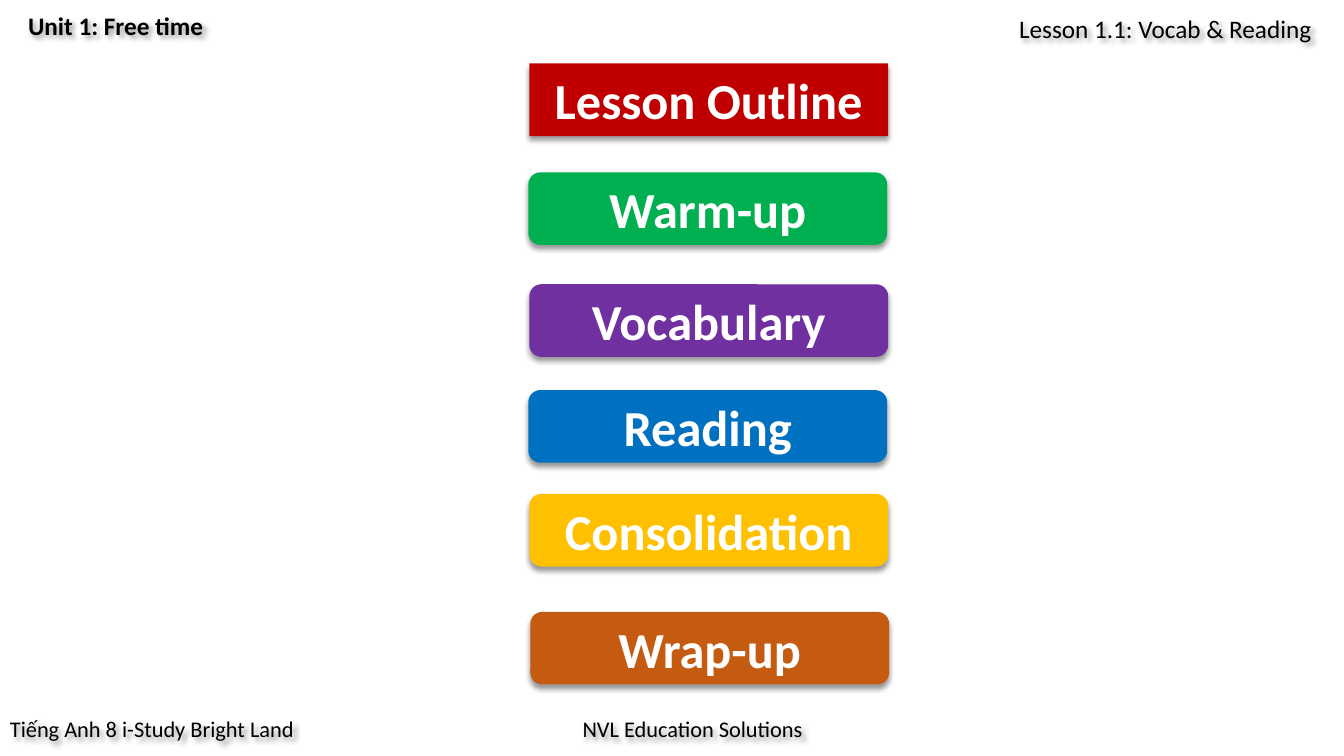
"""Build a lesson outline slide with six coloured cards and running captions."""
from dataclasses import dataclass

from lxml.etree import SubElement
from pptx import Presentation
from pptx.dml.color import RGBColor
from pptx.enum.shapes import MSO_SHAPE
from pptx.enum.text import MSO_ANCHOR, MSO_AUTO_SIZE, PP_ALIGN
from pptx.oxml.ns import qn
from pptx.shapes.autoshape import Shape
from pptx.slide import Slide
from pptx.util import Inches, Pt


@dataclass(frozen=True)
class Theme:
    font: str = "Calibri"
    dark: str = "000000"
    light: str = "FFFFFF"
    red: str = "C00000"
    green: str = "00B050"
    purple: str = "7030A0"
    blue: str = "0070C0"
    yellow: str = "FFC000"
    orange: str = "C55A11"
    card_size: int = 36
    header_size: int = 18
    footer_size: int = 16


@dataclass(frozen=True)
class Card:
    text: str
    left: float
    top: float
    color: str


@dataclass(frozen=True)
class Caption:
    text: str
    left: float
    top: float
    width: float
    height: float
    size: int
    bold: bool = False
    wrap: bool = False


THEME = Theme()
CARD_WIDTH, CARD_HEIGHT = 3.56, 0.72
TITLE_CARD = Card("Lesson Outline", 5.25, 0.63, THEME.red)
STAGE_CARDS = [
    Card("Warm-up", 5.24, 1.71, THEME.green),
    Card("Vocabulary", 5.25, 2.82, THEME.purple),
    Card("Reading", 5.24, 3.87, THEME.blue),
    Card("Consolidation", 5.25, 4.9, THEME.yellow),
    Card("Wrap-up", 5.26, 6.07, THEME.orange),
]
CAPTIONS = [
    Caption("Lesson 1.1: Vocab & Reading", 10.01, 0.08, 3.14, 0.4, THEME.header_size, wrap=True),
    Caption("Unit 1: Free time", 0.18, 0.05, 1.96, 0.4, THEME.header_size, bold=True),
    Caption("Tiếng Anh 8 i-Study Bright Land", 0, 7.05, 3.21, 0.37, THEME.footer_size),
    Caption("NVL Education Solutions", 5.68, 7.05, 2.46, 0.37, THEME.footer_size),
]


def write_text(shape: Shape, text: str, *, size: int, color: str, bold: bool = False,
               wrap: bool = True, align: PP_ALIGN = PP_ALIGN.LEFT,
               anchor: MSO_ANCHOR = MSO_ANCHOR.TOP) -> None:
    frame = shape.text_frame
    frame.word_wrap = wrap
    frame.auto_size = MSO_AUTO_SIZE.NONE
    frame.vertical_anchor = anchor
    paragraph = frame.paragraphs[0]
    paragraph.alignment = align
    run = paragraph.add_run()
    run.text = text
    run.font.name = THEME.font
    run.font.size = Pt(size)
    run.font.bold = bold
    run.font.color.rgb = RGBColor.from_string(color)


def add_shadow(shape: Shape, angle: int) -> None:
    shape.shadow.inherit = False
    effects = shape.element.spPr.find(qn("a:effectLst"))
    shadow = SubElement(effects, qn("a:outerShdw"), blurRad=str(Pt(4)), dist=str(Pt(3)),
                        dir=str(angle * 60000), algn="t", rotWithShape="0")
    color = SubElement(shadow, qn("a:srgbClr"), val=THEME.dark)
    SubElement(color, qn("a:alpha"), val="40000")


def format_card(shape: Shape, card: Card) -> None:
    shape.fill.solid()
    shape.fill.fore_color.rgb = RGBColor.from_string(card.color)
    shape.line.fill.background()
    add_shadow(shape, 90)
    write_text(shape, card.text, size=THEME.card_size, color=THEME.light, bold=True,
               align=PP_ALIGN.CENTER, anchor=MSO_ANCHOR.MIDDLE)


def add_title_card(slide: Slide, card: Card) -> None:
    title = slide.shapes.title
    title.left, title.top = Inches(card.left), Inches(card.top)
    title.width, title.height = Inches(CARD_WIDTH), Inches(CARD_HEIGHT)
    geometry = SubElement(title.element.spPr, qn("a:prstGeom"), prst="roundRect")
    SubElement(geometry, qn("a:avLst"))
    format_card(title, card)


def add_stage_card(slide: Slide, card: Card) -> None:
    shape = slide.shapes.add_shape(
        MSO_SHAPE.ROUNDED_RECTANGLE, Inches(card.left), Inches(card.top),
        Inches(CARD_WIDTH), Inches(CARD_HEIGHT))
    format_card(shape, card)


def add_caption(slide: Slide, caption: Caption) -> None:
    shape = slide.shapes.add_textbox(Inches(caption.left), Inches(caption.top),
                                     Inches(caption.width), Inches(caption.height))
    add_shadow(shape, 45)
    write_text(shape, caption.text, size=caption.size, color=THEME.dark,
               bold=caption.bold, wrap=caption.wrap)


def main() -> None:
    presentation = Presentation()
    presentation.slide_width, presentation.slide_height = Inches(13.33), Inches(7.5)
    slide = presentation.slides.add_slide(presentation.slide_layouts[5])
    for caption in CAPTIONS:
        add_caption(slide, caption)
    add_title_card(slide, TITLE_CARD)
    for card in STAGE_CARDS:
        add_stage_card(slide, card)
    presentation.save("out.pptx")


if __name__ == "__main__":
    main()
